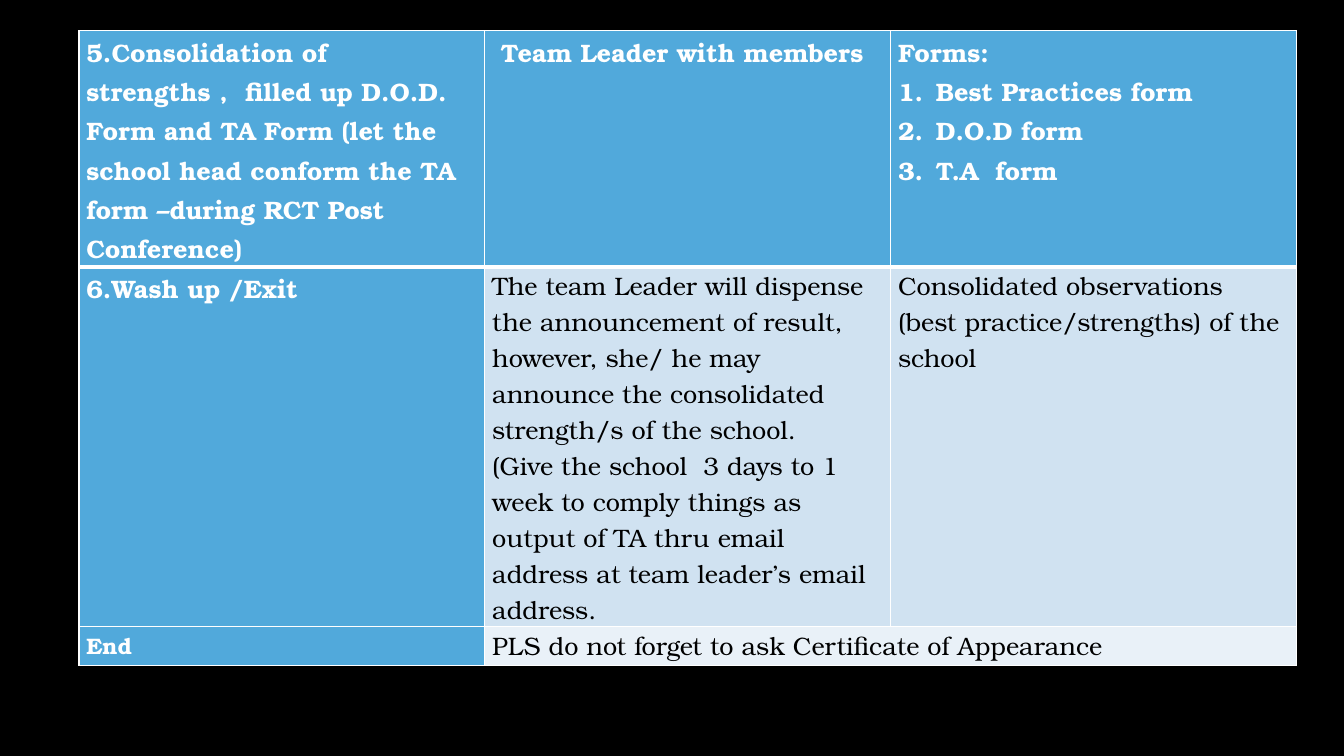
import pptx
import pptx.util
import pptx.dml.color
import pptx.oxml
import pptx.oxml.ns

Pt = pptx.util.Pt
RGBColor = pptx.dml.color.RGBColor

BLACK = RGBColor(0x00, 0x00, 0x00)
WHITE = RGBColor(0xFF, 0xFF, 0xFF)
BLUE = RGBColor(0x51, 0xA9, 0xDB)
PALE = RGBColor(0xD0, 0xE2, 0xF1)
PALER = RGBColor(0xE9, 0xF1, 0xF8)

FONT = "TeX Gyre Bonum"
HEAD = {"name": FONT, "size": Pt(18), "bold": True}
BODY = {"name": FONT, "size": Pt(18), "bold": False}
SMALL_HEAD = {**HEAD, "size": Pt(16)}
MARGINS = {"margin_left": Pt(5.3), "margin_right": Pt(6.5),
           "margin_top": 0, "margin_bottom": 0}

# Each cell: fill, text colour, font format, paragraphs, numbered items
STEPS = [
    [
        (BLUE, WHITE, HEAD,
         ["5.Consolidation of strengths ,  filled up D.O.D. Form and TA Form "
          "(let the school head conform the TA form –during RCT Post Conference)"], []),
        (BLUE, WHITE, HEAD, [" Team Leader with members"], []),
        (BLUE, WHITE, HEAD, ["Forms:"],
         ["Best Practices form", "D.O.D form", "T.A  form"]),
    ],
    [
        (BLUE, WHITE, HEAD, ["6.Wash up /Exit"], []),
        (PALE, BLACK, BODY,
         ["The team Leader will dispense the announcement of result, however, "
          "she/ he may announce the consolidated strength/s of the school.",
          "(Give the school  3 days to 1 week to comply things as output of TA "
          "thru email address at team leader’s email address."], []),
        (PALE, BLACK, BODY,
         ["Consolidated observations (best practice/strengths) of the school"], []),
    ],
    [
        (BLUE, WHITE, SMALL_HEAD, ["End"], []),
        (PALER, BLACK, BODY,
         ["PLS do not forget to ask Certificate of Appearance"], []),
    ],
]
LEFT, TOP, COL_WIDTH = 56.4, 21.9, 289.9
ROW_HEIGHTS = [147.6, 251.3, 28.1]
RULE, HEAD_RULE = 1, 3


def number_paragraph(p):
    """Give the paragraph a hanging automatic number."""
    pPr = p._p.get_or_add_pPr()
    pPr.set("marL", str(Pt(27)))
    pPr.set("indent", str(-Pt(27)))
    bullet = pptx.oxml.parse_xml(
        f'<a:buAutoNum {pptx.oxml.ns.nsdecls("a")} type="arabicPeriod"/>')
    pPr.append(bullet)


def set_borders(cell, widths):
    tcPr = cell._tc.get_or_add_tcPr()
    for i, (side, width) in enumerate(widths.items()):
        line = pptx.oxml.parse_xml(
            f'<a:ln{side} {pptx.oxml.ns.nsdecls("a")} w="{Pt(width)}">'
            f'<a:solidFill><a:srgbClr val="{WHITE}"/></a:solidFill></a:ln{side}>')
        tcPr.insert(i, line)


def fill_cell(cell, fill, color, font, paragraphs, items):
    cell.fill.solid()
    cell.fill.fore_color.rgb = fill
    for name, value in MARGINS.items():
        setattr(cell, name, value)
    tf = cell.text_frame
    for i, text in enumerate(paragraphs + items):
        p = tf.add_paragraph() if i else tf.paragraphs[0]
        p.line_spacing = 1.07
        if i >= len(paragraphs):
            number_paragraph(p)
        r = p.add_run()
        r.text = text
        for name, value in font.items():
            setattr(r.font, name, value)
        r.font.color.rgb = color


def main():
    prs = pptx.Presentation()
    prs.slide_width, prs.slide_height = Pt(960), Pt(540)
    s = prs.slides.add_slide(prs.slide_layouts[6])
    s.background.fill.solid()
    s.background.fill.fore_color.rgb = BLACK

    rows, cols = len(STEPS), len(STEPS[0])
    table = s.shapes.add_table(rows, cols, Pt(LEFT), Pt(TOP),
                               Pt(COL_WIDTH * cols), Pt(sum(ROW_HEIGHTS))).table
    table.horz_banding = False
    for column in table.columns:
        column.width = Pt(COL_WIDTH)
    for row, height in zip(table.rows, ROW_HEIGHTS):
        row.height = Pt(height)
    table.cell(rows - 1, 1).merge(table.cell(rows - 1, cols - 1))

    for i, step in enumerate(STEPS):
        for j, content in enumerate(step):
            fill_cell(table.cell(i, j), *content)
        widths = {"L": RULE, "R": RULE,
                  "T": HEAD_RULE if i == 1 else RULE,
                  "B": HEAD_RULE if i == 0 else RULE}
        for j in range(cols):
            set_borders(table.cell(i, j), widths)

    prs.save("out.pptx")


if __name__ == "__main__":
    main()
